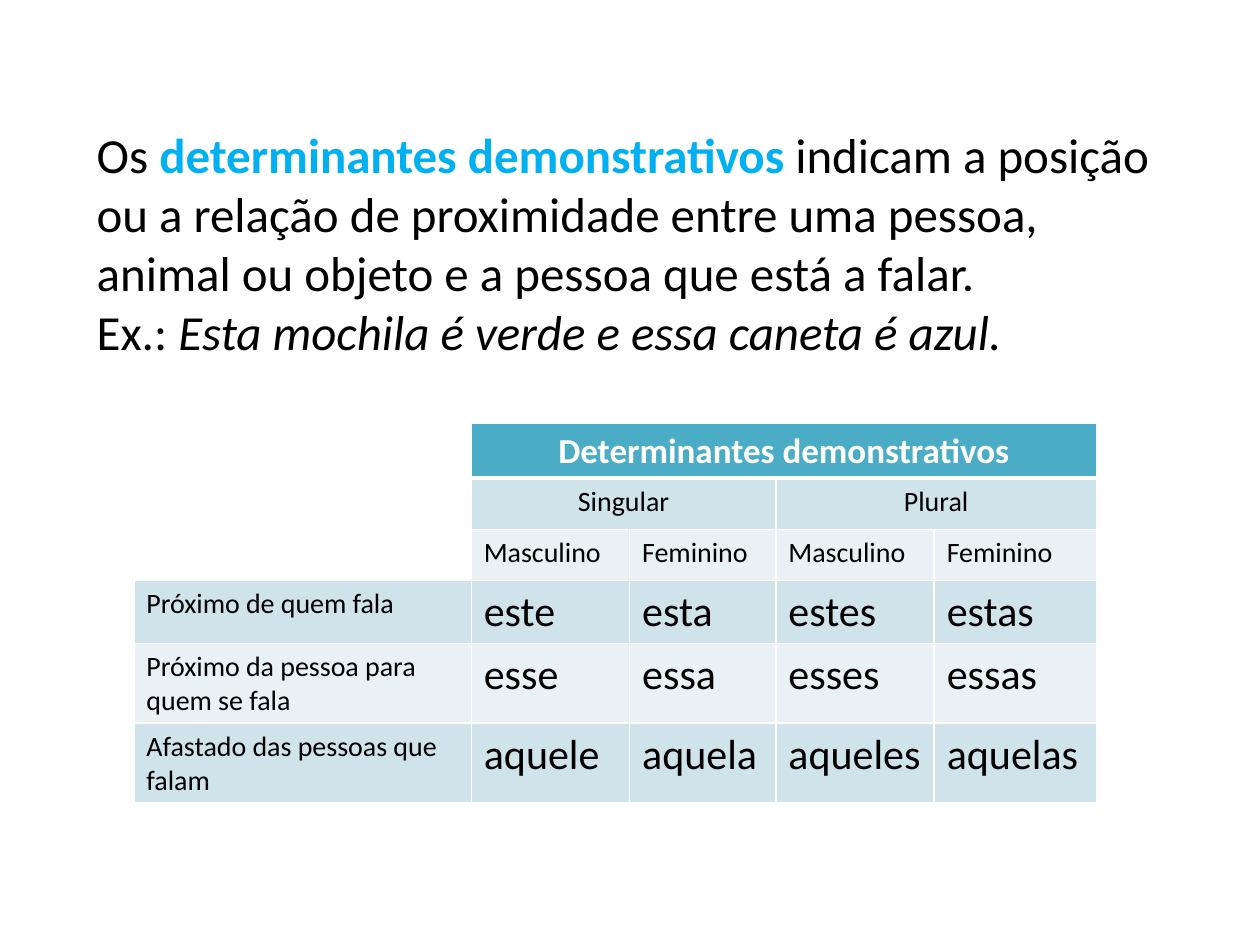
from lxml.etree import SubElement
from pptx import Presentation
from pptx.dml.color import RGBColor
from pptx.enum.text import MSO_AUTO_SIZE as AutoSize, PP_ALIGN as Align
from pptx.oxml.ns import qn
from pptx.util import Pt

COLORS = {"text": "000000", "accent": "00B0F0", "white": "FFFFFF",
          "header": "4BACC6", "dark": "D0E3EA", "light": "E9F1F5"}
FONT = "Calibri"

INTRO = [
    [("Os ", "text", False, False),
     ("determinantes demonstrativos ", "accent", True, False),
     ("indicam a posição ou a relação de proximidade entre uma pessoa, "
      "animal ou objeto e a pessoa que está a falar.", "text", False, False)],
    [("Ex.: ", "text", False, False),
     ("Esta mochila é verde e essa caneta é azul.", "text", False, True)],
]
ROWS = [
    ["", "Determinantes demonstrativos", "", "", ""],
    ["", "Singular", "", "Plural", ""],
    ["", "Masculino", "Feminino", "Masculino", "Feminino"],
    ["Próximo de quem fala", "este", "esta", "estes", "estas"],
    ["Próximo da pessoa para quem se fala", "esse", "essa", "esses", "essas"],
    ["Afastado das pessoas que falam", "aquele", "aquela", "aqueles", "aquelas"],
]
ROW_FILLS = ["header", "dark", "light", "dark", "light", "dark"]
MERGES = [(0, 1, 4), (1, 1, 2), (1, 3, 4)]
COLUMN_WIDTHS = [192.8, 90.5, 83.6, 90.5, 92.7]
ROW_HEIGHTS = [28.8] + [29.2] * 5


def color(name):
    return RGBColor.from_string(COLORS[name])


def add_span(para, text, size, tint="text", bold=False, italic=False):
    span = para.add_run()
    span.text = text
    font = span.font
    font.name, font.size, font.bold, font.italic = FONT, Pt(size), bold, italic
    font.color.rgb = color(tint)


def add_borders(cell, bottom_width):
    properties = cell._tc.get_or_add_tcPr()
    for side, width in (("L", 1), ("R", 1), ("T", 1), ("B", bottom_width)):
        line = SubElement(properties, qn(f"a:ln{side}"), w=str(Pt(width)))
        fill = SubElement(line, qn("a:solidFill"))
        SubElement(fill, qn("a:srgbClr"), val=COLORS["white"])


def add_intro(page):
    box = page.shapes.add_textbox(Pt(48.2), Pt(67.7), Pt(623.5), Pt(143.3))
    frame = box.text_frame
    frame.word_wrap = True
    frame.auto_size = AutoSize.SHAPE_TO_FIT_TEXT
    for index, spans in enumerate(INTRO):
        para = frame.add_paragraph() if index else frame.paragraphs[0]
        for text, tint, bold, italic in spans:
            add_span(para, text, 28, tint, bold, italic)


def add_grid(page):
    table = page.shapes.add_table(
        len(ROWS), len(COLUMN_WIDTHS), Pt(76.5), Pt(242),
        Pt(sum(COLUMN_WIDTHS)), Pt(sum(ROW_HEIGHTS))).table
    table.first_row = table.horz_banding = False
    for column, width in zip(table.columns, COLUMN_WIDTHS):
        column.width = Pt(width)
    for row, height in zip(table.rows, ROW_HEIGHTS):
        row.height = Pt(height)
    for row, first, last in MERGES:
        table.cell(row, first).merge(table.cell(row, last))

    for row, texts in enumerate(ROWS):
        for column, text in enumerate(texts):
            cell = table.cell(row, column)
            add_borders(cell, 3 if row == 0 else 1)
            if column == 0 and not text:
                cell.fill.background()
                continue
            cell.fill.solid()
            cell.fill.fore_color.rgb = color(ROW_FILLS[row])
            if not text:
                continue
            para = cell.text_frame.paragraphs[0]
            if cell.is_merge_origin:
                para.alignment = Align.CENTER
            if row == 0:
                add_span(para, text, 20, "white", bold=True)
            else:
                add_span(para, text, 24 if row > 2 and column else 16)


def main():
    deck = Presentation()
    deck.slide_width, deck.slide_height = Pt(720), Pt(540)
    page = deck.slides.add_slide(deck.slide_layouts[6])
    add_intro(page)
    add_grid(page)
    deck.save("out.pptx")


if __name__ == "__main__":
    main()
